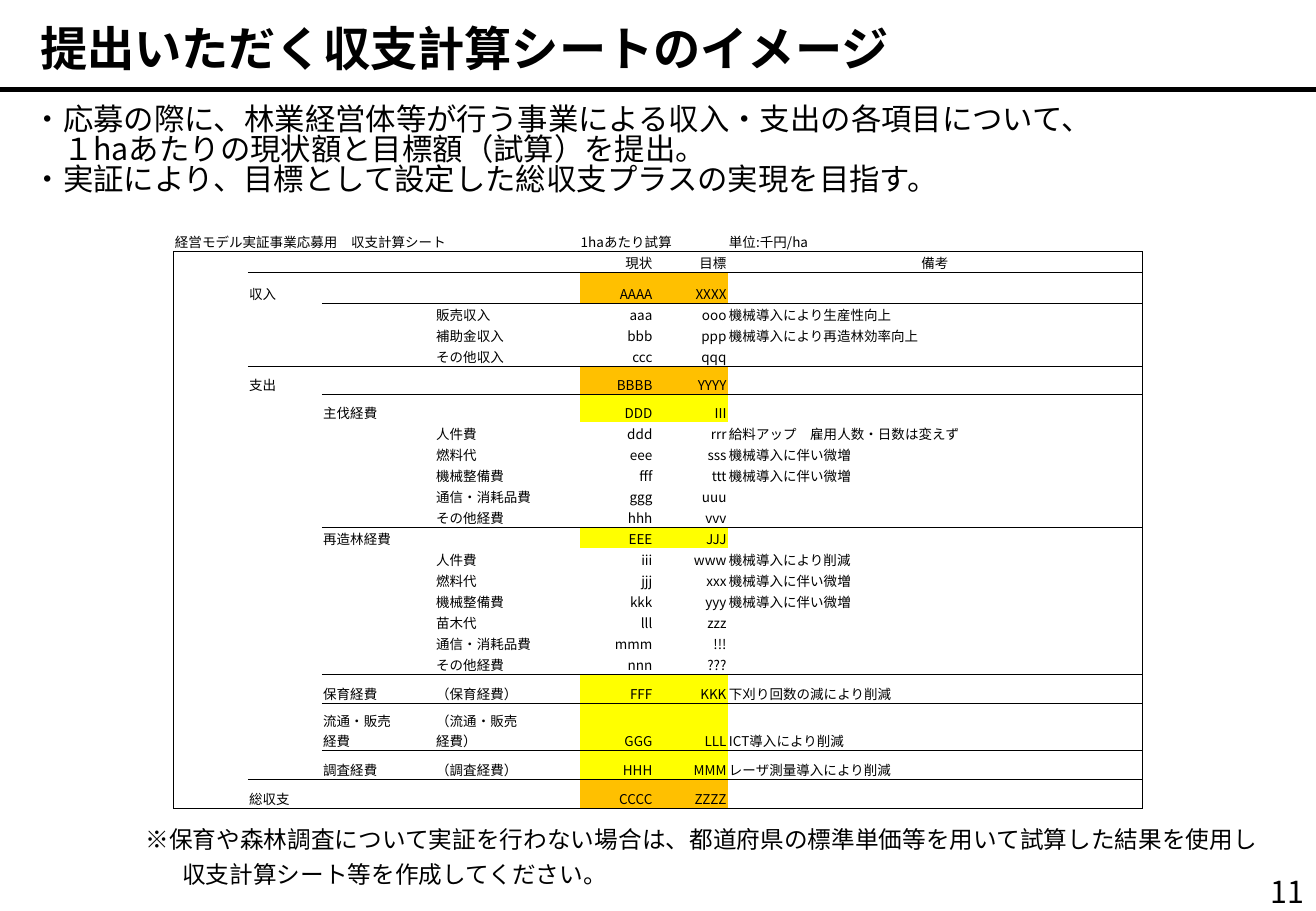
from dataclasses import dataclass

from lxml.etree import SubElement
from pptx import Presentation
from pptx.dml.color import RGBColor
from pptx.enum.shapes import MSO_CONNECTOR
from pptx.enum.text import MSO_ANCHOR, MSO_AUTO_SIZE, PP_ALIGN
from pptx.oxml.ns import qn
from pptx.util import Inches, Pt


@dataclass(frozen=True)
class Theme:
    font: str = "Noto Sans CJK JP"
    ink: str = "000000"
    total_fill: str = "FFC000"
    subtotal_fill: str = "FFFF00"
    title_size: int = 28
    body_size: int = 18
    note_size: int = 14
    table_size: int = 8
    rule_width: float = 3
    border_width: float = 0.5


THEME = Theme()

TITLE = "提出いただく収支計算シートのイメージ"
PAGE_NUMBER = "11"
BODY_LINES = [
    "・応募の際に、林業経営体等が行う事業による収入・支出の各項目について、",
    "　１haあたりの現状額と目標額（試算）を提出。",
    "・実証により、目標として設定した総収支プラスの実現を目指す。",
]
NOTE = (
    "※保育や森林調査について実証を行わない場合は、都道府県の標準単価等を用いて"
    "試算した結果を使用し収支計算シート等を作成してください。"
)

# Frame column, section, group, item, current amount, target amount, remark
SHEET_ROWS = [
    ("経営モデル実証事業応募用　収支計算シート", "", "", "", "1haあたり試算", "", "単位:千円/ha"),
    ("", "", "", "", "現状", "目標", "備考"),
    ("", "収入", "", "", "AAAA", "XXXX", ""),
    ("", "", "", "販売収入", "aaa", "ooo", "機械導入により生産性向上"),
    ("", "", "", "補助金収入", "bbb", "ppp", "機械導入により再造林効率向上"),
    ("", "", "", "その他収入", "ccc", "qqq", ""),
    ("", "支出", "", "", "BBBB", "YYYY", ""),
    ("", "", "主伐経費", "", "DDD", "III", ""),
    ("", "", "", "人件費", "ddd", "rrr", "給料アップ　雇用人数・日数は変えず"),
    ("", "", "", "燃料代", "eee", "sss", "機械導入に伴い微増"),
    ("", "", "", "機械整備費", "fff", "ttt", "機械導入に伴い微増"),
    ("", "", "", "通信・消耗品費", "ggg", "uuu", ""),
    ("", "", "", "その他経費", "hhh", "vvv", ""),
    ("", "", "再造林経費", "", "EEE", "JJJ", ""),
    ("", "", "", "人件費", "iii", "www", "機械導入により削減"),
    ("", "", "", "燃料代", "jjj", "xxx", "機械導入に伴い微増"),
    ("", "", "", "機械整備費", "kkk", "yyy", "機械導入に伴い微増"),
    ("", "", "", "苗木代", "lll", "zzz", ""),
    ("", "", "", "通信・消耗品費", "mmm", "!!!", ""),
    ("", "", "", "その他経費", "nnn", "???", ""),
    ("", "", "保育経費", "（保育経費）", "FFF", "KKK", "下刈り回数の減により削減"),
    ("", "", "流通・販売\v経費", "（流通・販売\v経費）", "GGG", "LLL", "ICT導入により削減"),
    ("", "", "調査経費", "（調査経費）", "HHH", "MMM", "レーザ測量導入により削減"),
    ("", "総収支", "", "", "CCCC", "ZZZZ", ""),
]
COLUMN_WIDTHS = [0.61, 0.61, 0.93, 1.19, 0.61, 0.61, 3.41]
TABLE_HEIGHT = 4.76
TALL_ROWS = {2: 0.25, 6: 0.23, 7: 0.23, 20: 0.24, 21: 0.39, 22: 0.24, 23: 0.24}
# Row -> first column of the line drawn beneath it, which runs to the right edge
LINE_STARTS = {0: 0, 1: 1, 2: 2, 5: 1, 6: 2, 12: 2, 19: 2, 20: 2, 21: 2, 22: 1, 23: 0}
SECTION, GROUP, REMARK = 1, 2, 6
AMOUNTS = (4, 5)
HEADER_ROW = 1


def style_paragraph(paragraph, size, bold=False, align=PP_ALIGN.LEFT, spacing=None):
    paragraph.alignment = align
    if spacing:
        paragraph.line_spacing = spacing
    font = paragraph.font
    font.size, font.bold, font.name = Pt(size), bold, THEME.font
    font.color.rgb = RGBColor.from_string(THEME.ink)
    SubElement(font._rPr, qn("a:ea"), typeface=THEME.font)


def add_text(slide, box, lines, size, anchor=MSO_ANCHOR.TOP, **style):
    shape = slide.shapes.add_textbox(*map(Inches, box))
    frame = shape.text_frame
    frame.word_wrap = True
    frame.vertical_anchor = anchor
    frame.text = "\n".join(lines)
    for paragraph in frame.paragraphs:
        style_paragraph(paragraph, size, **style)
    return shape


def add_title(slide):
    title = slide.shapes.title
    title.left, title.top, title.width, title.height = map(Inches, (0.23, 0.11, 7.61, 0.57))
    frame = title.text_frame
    frame.text = TITLE
    frame.auto_size = MSO_AUTO_SIZE.NONE
    frame.vertical_anchor = MSO_ANCHOR.MIDDLE
    style_paragraph(frame.paragraphs[0], THEME.title_size, bold=True)


def add_title_rule(slide, width):
    y = Inches(0.74)
    rule = slide.shapes.add_connector(MSO_CONNECTOR.STRAIGHT, 0, y, width, y)
    rule.line.width = Pt(THEME.rule_width)
    rule.line.color.rgb = RGBColor.from_string(THEME.ink)
    SubElement(rule._element.spPr, qn("a:effectLst"))


def has_line_below(row, column):
    return row in LINE_STARTS and column >= LINE_STARTS[row]


def set_borders(cell, row, column):
    sides = {
        "L": row > 0 and column == 0,
        "R": row > 0 and column == REMARK,
        "T": has_line_below(row - 1, column),
        "B": has_line_below(row, column),
    }
    properties = cell._tc.get_or_add_tcPr()
    for side, drawn in sides.items():
        line = SubElement(properties, qn(f"a:ln{side}"), w=str(Pt(THEME.border_width)))
        if drawn:
            fill = SubElement(line, qn("a:solidFill"))
            SubElement(fill, qn("a:srgbClr"), val=THEME.ink)
        else:
            SubElement(line, qn("a:noFill"))


def set_fill(cell, row, column):
    values = SHEET_ROWS[row]
    is_subtotal = row > 0 and values[GROUP]
    if column in AMOUNTS and (values[SECTION] or is_subtotal):
        color = THEME.total_fill if values[SECTION] else THEME.subtotal_fill
        cell.fill.solid()
        cell.fill.fore_color.rgb = RGBColor.from_string(color)
    else:
        cell.fill.background()


def set_cell_text(cell, row, column):
    text = SHEET_ROWS[row][column]
    is_remark_header = row == HEADER_ROW and column == REMARK
    align = PP_ALIGN.LEFT
    if is_remark_header:
        align = PP_ALIGN.CENTER
    elif row > 0 and column in AMOUNTS:
        align = PP_ALIGN.RIGHT
    cell.margin_left = cell.margin_top = cell.margin_right = Inches(0.01)
    cell.margin_bottom = 0
    cell.vertical_anchor = MSO_ANCHOR.MIDDLE if is_remark_header else MSO_ANCHOR.BOTTOM
    cell.text = text
    paragraph = cell.text_frame.paragraphs[0]
    style_paragraph(paragraph, THEME.table_size, align=align)
    if not text:
        SubElement(paragraph._p, qn("a:endParaRPr"), sz=str(THEME.table_size * 100))


def add_sheet(slide):
    row_count, column_count = len(SHEET_ROWS), len(COLUMN_WIDTHS)
    frame = slide.shapes.add_table(
        row_count, column_count, Inches(1.43), Inches(1.9),
        Inches(sum(COLUMN_WIDTHS)), Inches(TABLE_HEIGHT),
    )
    table = frame.table
    table.first_row = table.horz_banding = False
    for column, width in zip(table.columns, COLUMN_WIDTHS):
        column.width = Inches(width)
    plain_height = (TABLE_HEIGHT - sum(TALL_ROWS.values())) / (row_count - len(TALL_ROWS))
    for row in range(row_count):
        table.rows[row].height = Inches(TALL_ROWS.get(row, plain_height))
        for column in range(column_count):
            cell = table.cell(row, column)
            set_cell_text(cell, row, column)
            set_borders(cell, row, column)
            set_fill(cell, row, column)
    for first, last in ((0, 3), AMOUNTS):
        table.cell(0, first).merge(table.cell(0, last))


def main():
    presentation = Presentation()
    presentation.slide_width, presentation.slide_height = Inches(10.83), Inches(7.5)
    slide = presentation.slides.add_slide(presentation.slide_layouts[5])
    add_title_rule(slide, presentation.slide_width)
    add_title(slide)
    add_text(slide, (9.48, 7.14, 1.35, 0.4), [PAGE_NUMBER], THEME.body_size,
             anchor=MSO_ANCHOR.MIDDLE, align=PP_ALIGN.RIGHT)
    add_text(slide, (0.17, 0.83, 10.35, 6.82), BODY_LINES, THEME.body_size, spacing=0.82)
    add_sheet(slide)
    note = add_text(slide, (1.1, 6.69, 9.42, 0.94), [NOTE], THEME.note_size, spacing=1.23)
    indent = Inches(0.3)
    properties = note.text_frame.paragraphs[0]._p.get_or_add_pPr()
    properties.set("marL", str(indent))
    properties.set("indent", str(-indent))
    presentation.save("out.pptx")


if __name__ == "__main__":
    main()
